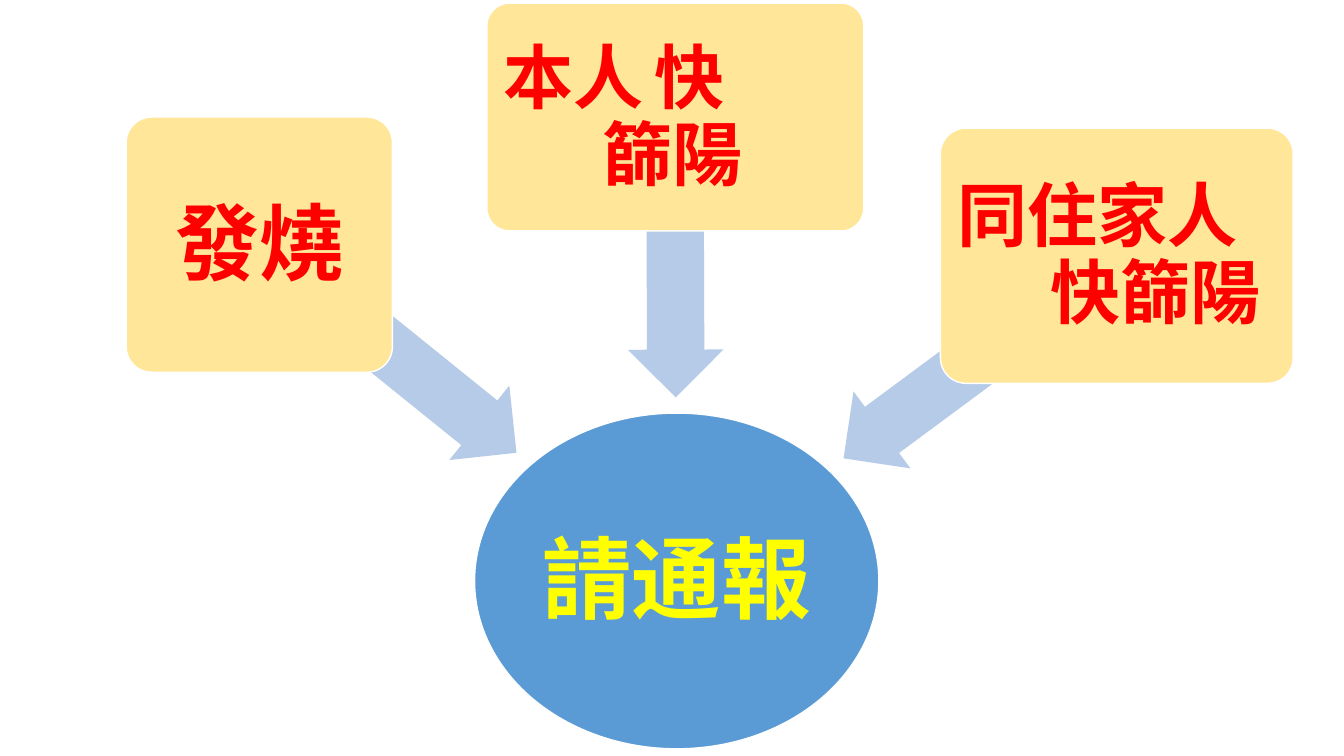
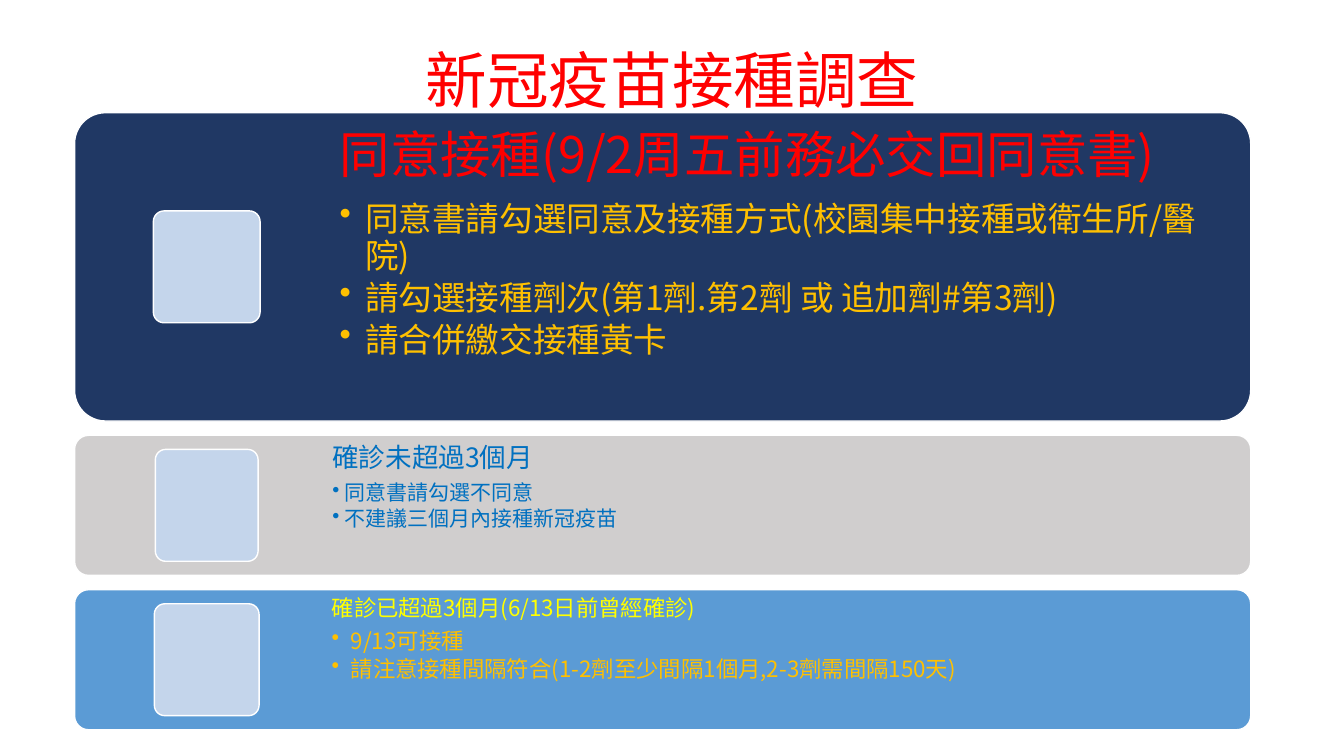
from dataclasses import dataclass

from lxml import etree
from pptx import Presentation
from pptx.dml.color import RGBColor
from pptx.enum.shapes import MSO_SHAPE
from pptx.enum.text import MSO_ANCHOR, PP_ALIGN
from pptx.oxml.ns import qn
from pptx.util import Cm, Pt

ELLIPSE = MSO_SHAPE.OVAL
ROUNDED = MSO_SHAPE.ROUNDED_RECTANGLE
ARROW = MSO_SHAPE.LEFT_ARROW
LEFT, CENTER = PP_ALIGN.LEFT, PP_ALIGN.CENTER
TOP, MIDDLE = MSO_ANCHOR.TOP, MSO_ANCHOR.MIDDLE


@dataclass(frozen=True)
class Theme:
    # Colours
    white: str = "FFFFFF"
    red: str = "FF0000"
    yellow: str = "FFFF00"
    gold: str = "FFC000"
    ink_blue: str = "0070C0"
    blue: str = "5B9BD5"
    navy: str = "203864"
    grey: str = "D0CECE"
    cream: str = "FFE699"
    arrow: str = "B5CBE7"
    tile: str = "C4D5EB"
    # Fonts and sizes
    display_font: str = "Courier New"
    body_font: str = "Noto Sans CJK SC"
    goal_size: int = 64
    short_size: int = 60
    cause_size: int = 50
    title_size: int = 44
    # Spacing, as shares of the type size
    line_height: float = 1.1
    heading_gap: float = 0.35
    bullet_gap: float = 0.15


@dataclass
class Line:
    text: str
    size: int
    color: str
    align: PP_ALIGN = LEFT
    indent: float = 0
    tab: float = 0
    gap: float = 0
    bullet: bool = False


class Slides:
    """Holds the theme and the slide being drawn."""

    def __init__(self, theme):
        self.theme = theme
        self.deck = Presentation()
        self.deck.slide_width, self.deck.slide_height = Cm(33.87), Cm(19.05)
        self.page = None

    def new_page(self):
        self.page = self.deck.slides.add_slide(self.deck.slide_layouts[6])

    def shape(self, kind, left, top, width, height, fill, outlined=True):
        shape = self.page.shapes.add_shape(
            kind, Cm(left), Cm(top), Cm(width), Cm(height))
        shape.shadow.inherit = False
        shape.fill.solid()
        shape.fill.fore_color.rgb = RGBColor.from_string(fill)
        if outlined:
            shape.line.color.rgb = RGBColor.from_string(self.theme.white)
            shape.line.width = Pt(1)
        else:
            shape.line.fill.background()
        return shape

    def rounded(self, left, top, width, height, fill):
        shape = self.shape(ROUNDED, left, top, width, height, fill)
        shape.adjustments[0] = 0.1
        return shape

    def arrow(self, left, top, length, angle):
        shape = self.shape(ARROW, left, top, length, 2.41,
                           self.theme.arrow, outlined=False)
        shape.adjustments[0], shape.adjustments[1] = 0.6, 0.5
        shape.rotation = angle

    def text_box(self, left, top, width, height):
        return self.page.shapes.add_textbox(
            Cm(left), Cm(top), Cm(width), Cm(height))

    def set_lines(self, box, lines, inset, font, bold=False, anchor=MIDDLE):
        frame = box.text_frame
        frame.word_wrap = True
        frame.vertical_anchor = anchor
        frame.margin_left = frame.margin_right = Cm(inset)
        frame.margin_top = frame.margin_bottom = Cm(inset)
        frame.text = "\n".join(line.text for line in lines)
        for para, line in zip(frame.paragraphs, lines):
            self.format_paragraph(para, line)
            for span in para.runs:
                span.font.size = Pt(line.size)
                span.font.bold = bold
                span.font.color.rgb = RGBColor.from_string(line.color)
                span.font.name = font
                properties = span._r.get_or_add_rPr()
                east_asian = etree.SubElement(properties, qn("a:ea"))
                east_asian.set("typeface", font)

    def format_paragraph(self, para, line):
        para.alignment = line.align
        para.line_spacing = Pt(round(line.size * self.theme.line_height, 1))
        para.space_after = Pt(round(line.size * line.gap, 1))
        properties = para._p.get_or_add_pPr()
        properties.set("marL", str(Cm(line.indent)))
        properties.set("indent", str(-Cm(line.indent) if line.bullet else 0))
        if line.bullet:
            etree.SubElement(properties, qn("a:buChar")).set("char", "•")
        if line.tab:
            stops = etree.SubElement(properties, qn("a:tabLst"))
            stop = etree.SubElement(stops, qn("a:tab"))
            stop.set("pos", str(Cm(line.tab)))
            stop.set("algn", "l")

    def band(self, top, height, fill, tile_width, inset, heading, bullets):
        """Draw a full-width band with a tile, a heading and bullets."""
        tile_center, tile_height = 5.21, 2.82
        self.rounded(1.88, top, 29.64, height, fill)
        self.rounded(tile_center - tile_width / 2,
                     top + (height - tile_height) / 2,
                     tile_width, tile_height, self.theme.tile)
        self.set_lines(self.text_box(8.18, top, 23.37, height),
                       [heading, *bullets], inset, self.theme.body_font,
                       anchor=TOP)


def report_page(slides):
    theme = slides.theme
    slides.new_page()

    # Goal
    goal = slides.shape(ELLIPSE, 11.96, 10.41, 10.19, 8.46, theme.blue)
    slides.set_lines(
        goal, [Line("請通報", theme.goal_size, theme.yellow, CENTER)],
        0.1, theme.display_font, bold=True)

    # Arrows from the causes to the goal
    for arrow in ((5.61, 7.59, 8.33, 218.9),
                  (13.49, 5.28, 7.06, 269.8),
                  (20.42, 7.8, 8.56, 323.5)):
        slides.arrow(*arrow)

    # Causes
    size, red = theme.cause_size, theme.red
    causes = (
        ((3.18, 2.95, 6.71, 6.43),
         [Line("發燒", theme.short_size, red, CENTER)]),
        ((12.27, 0.08, 9.5, 5.74),
         [Line("本人\t快", size, red, tab=6.78),
          Line("篩陽", size, red, indent=2.49)]),
        ((23.7, 3.23, 8.89, 6.43),
         [Line("同住家人", size, red),
          Line("快篩陽", size, red, indent=2.34)]),
    )
    for place, lines in causes:
        slides.set_lines(slides.rounded(*place, theme.cream), lines, 0.25,
                         theme.display_font, bold=True)


def survey_page(slides):
    theme = slides.theme
    slides.new_page()

    # Title
    slides.set_lines(
        slides.text_box(2.34, 1.02, 29.21, 2.08),
        [Line("新冠疫苗接種調查", theme.title_size, theme.red, CENTER)],
        0, theme.body_font)

    # Bands: height, fill, tile width, inset, heading, bullet style, bullets
    bands = (
        (7.77, theme.navy, 2.69, 0.38,
         ("同意接種(9/2周五前務必交回同意書)", 36, theme.red),
         (24, theme.gold, 0.64),
         ("同意書請勾選同意及接種方式(校園集中接種或衛生所/醫院)",
          "請勾選接種劑次(第1劑.第2劑 或 追加劑#第3劑)",
          "請合併繳交接種黃卡")),
        (3.53, theme.grey, 2.59, 0.2,
         ("確診未超過3個月", 19, theme.ink_blue),
         (15, theme.ink_blue, 0.3),
         ("同意書請勾選不同意", "不建議三個月內接種新冠疫苗")),
        (3.53, theme.blue, 2.64, 0.18,
         ("確診已超過3個月(6/13日前曾經確診)", 16, theme.yellow),
         (16, theme.gold, 0.48),
         ("9/13可接種",
          "請注意接種間隔符合(1-2劑至少間隔1個月,2-3劑需間隔150天)")),
    )
    top, band_gap = 2.84, 0.36
    for height, fill, tile_width, inset, heading, style, texts in bands:
        size, color, indent = style
        bullets = [Line(text, size, color, indent=indent,
                        gap=theme.bullet_gap, bullet=True) for text in texts]
        slides.band(top, height, fill, tile_width, inset,
                    Line(*heading, gap=theme.heading_gap), bullets)
        top += height + band_gap


def main():
    slides = Slides(Theme())
    report_page(slides)
    survey_page(slides)
    slides.deck.save("out.pptx")


if __name__ == "__main__":
    main()
